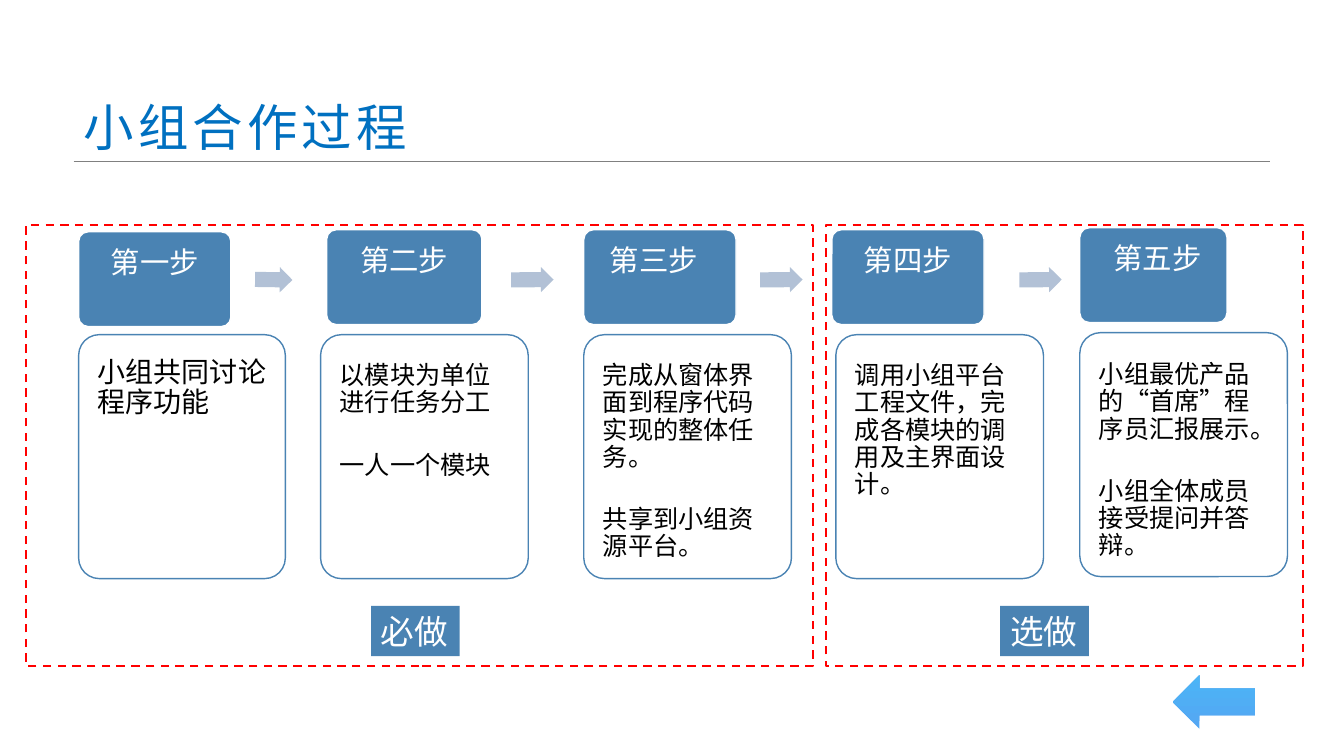
import pptx
import pptx.dml.color
import pptx.enum.dml
import pptx.enum.shapes
import pptx.enum.text
import pptx.util
from lxml import etree

PX = 9144  # 100 px to the inch
BLUE, PALE, WHITE, RED = "4A83B3", "B2C1D6", "FFFFFF", "FF0000"
SHAPE = pptx.enum.shapes.MSO_SHAPE
ANCHOR = pptx.enum.text.MSO_ANCHOR
ALIGN = pptx.enum.text.PP_ALIGN
DRAWING = "http://schemas.openxmlformats.org/drawingml/2006/main"

# head box, shift of its caption, card box, top of its text, size, paragraphs
STEPS = [
    ("第一步", (78, 230, 151, 94), 0, (78, 332, 205, 242), 7, 20,
     ["小组共同讨论程序功能"]),
    ("第二步", (324, 228, 154, 94), 0, (318, 332, 206, 242), 12, 18,
     ["以模块为单位进行任务分工", "一人一个模块"]),
    ("第三步", (579, 228, 151, 94), -6, (579, 332, 206, 242), 12, 18,
     ["完成从窗体界面到程序代码实现的整体任务。", "共享到小组资源平台。"]),
    ("第四步", (825, 228, 151, 94), 0, (829, 332, 206, 242), 12, 18,
     ["调用小组平台工程文件，完成各模块的调用及主界面设计。"]),
    ("第五步", (1071, 226, 146, 94), 4, (1071, 330, 206, 242), 13, 18,
     ["小组最优产品的“首席”程序员汇报展示。", "小组全体成员接受提问并答辩。"]),
]
# left, width, rotation
STEP_ARROWS = [(253, 37, 0.8), (507, 42, -0.4), (754, 42, -0.4), (1011, 42, -0.4)]
# frame box, caption, caption left
ZONES = [((26, 223, 780, 438), "必做", 368), ((819, 223, 473, 438), "选做", 992)]


def color(value):
    return pptx.dml.color.RGBColor.from_string(value)


def px(*lengths):
    return [pptx.util.Emu(length * PX) for length in lengths]


def add_block(slide, kind, box, fill=None, line=None, width=1, adjustments=()):
    block = slide.shapes.add_shape(kind, *px(*box))
    block.shadow.inherit = False
    for index, value in enumerate(adjustments):
        block.adjustments[index] = value
    if fill:
        block.fill.solid()
        block.fill.fore_color.rgb = color(fill)
    else:
        block.fill.background()
    if line:
        block.line.color.rgb = color(line)
        block.line.width = pptx.util.Pt(width)
    else:
        block.line.fill.background()
    return block


def write(frame, texts, font, size, ink, align=ALIGN.LEFT, spacing=0.9, gap=0,
          insets=(10, 5, 10, 5), anchor=ANCHOR.TOP, wrap=True):
    left, top, right, bottom = px(*insets)
    settings = {"margin_left": left, "margin_top": top, "margin_right": right,
                "margin_bottom": bottom, "vertical_anchor": anchor, "word_wrap": wrap}
    for name, value in settings.items():
        setattr(frame, name, value)
    for index, text in enumerate(texts):
        paragraph = frame.add_paragraph() if index else frame.paragraphs[0]
        paragraph.alignment = align
        paragraph.line_spacing = spacing
        if index:
            paragraph.space_before = pptx.util.Pt(gap)
        run = paragraph.add_run()
        run.text = text
        for name, value in {"name": font, "size": pptx.util.Pt(size)}.items():
            setattr(run.font, name, value)
        run.font.color.rgb = color(ink)


def add_title(slide, box):
    left, top, width, height = box
    rule_y = top + height - 1
    rule = slide.shapes.add_connector(
        pptx.enum.shapes.MSO_CONNECTOR.STRAIGHT, *px(left, rule_y, left + 1187, rule_y))
    rule.line.color.rgb = color("808080")
    rule.line.width = pptx.util.Pt(0.25)
    etree.SubElement(rule._element.spPr, f"{{{DRAWING}}}effectLst")
    title = slide.shapes.add_textbox(*px(*box)).text_frame
    write(title, ["小组合作过程"], "Arial", 36, "0070C0", anchor=ANCHOR.BOTTOM)
    # letter spacing of 3 points
    title.paragraphs[0].runs[0].font._element.set("spc", "300")


def add_head(slide, box, caption, shift):
    left, top, width, height = box
    add_block(slide, SHAPE.ROUNDED_RECTANGLE, box, BLUE, WHITE, adjustments=[0.1])
    head = slide.shapes.add_textbox(*px(left + shift, top, width, 63))
    write(head.text_frame, [caption], "Arial", 21, WHITE, ALIGN.CENTER,
          insets=(16, 16, 16, 9))


def add_card(slide, box, text_top, size, texts):
    left, top, width, height = box
    card = add_block(slide, SHAPE.ROUNDED_RECTANGLE, box, WHITE, BLUE, adjustments=[0.1])
    tint = card._element.spPr.find(f"{{{DRAWING}}}solidFill/{{{DRAWING}}}srgbClr")
    etree.SubElement(tint, f"{{{DRAWING}}}alpha", val="90000")
    body = slide.shapes.add_textbox(*px(left + 3, top + text_top, width - 6, 228))
    write(body.text_frame, texts, "Noto Sans CJK SC", size, "000000", gap=25,
          insets=(16, 16, 16, 16))


def add_step_arrow(slide, box, rotation):
    arrow = add_block(slide, SHAPE.RIGHT_ARROW, box, PALE, adjustments=[0.6, 0.5])
    arrow.rotation = rotation


def add_zone(slide, box, caption, caption_left):
    left, top, width, height = box
    frame = add_block(slide, SHAPE.RECTANGLE, box, line=RED, width=1.5)
    frame.line.dash_style = pptx.enum.dml.MSO_LINE.DASH
    label = add_block(slide, SHAPE.RECTANGLE,
                      (caption_left, top + height - 60, 88, 50), BLUE)
    write(label.text_frame, [caption], "Arial", 24, WHITE, spacing=1, wrap=False)


def add_back_arrow(slide, box):
    fill = add_block(slide, SHAPE.LEFT_ARROW, box).fill
    fill.gradient()
    fill.gradient_angle = 90
    for stop, shade in zip(fill.gradient_stops, ("54A7F3", "4BB4F6")):
        stop.color.rgb = color(shade)


def main():
    deck = pptx.Presentation()
    deck.slide_width, deck.slide_height = px(1333, 750)
    slide = deck.slides.add_slide(deck.slide_layouts[6])
    add_title(slide, (73, 49, 660, 112))
    for caption, head_box, shift, card_box, text_top, size, texts in STEPS:
        add_head(slide, head_box, caption, shift)
        add_card(slide, card_box, text_top, size, texts)
    for left, width, rotation in STEP_ARROWS:
        add_step_arrow(slide, (left, 265, width, 25), rotation)
    for box, caption, caption_left in ZONES:
        add_zone(slide, box, caption, caption_left)
    add_back_arrow(slide, (1163, 670, 82, 53))
    deck.save("out.pptx")


if __name__ == "__main__":
    main()
